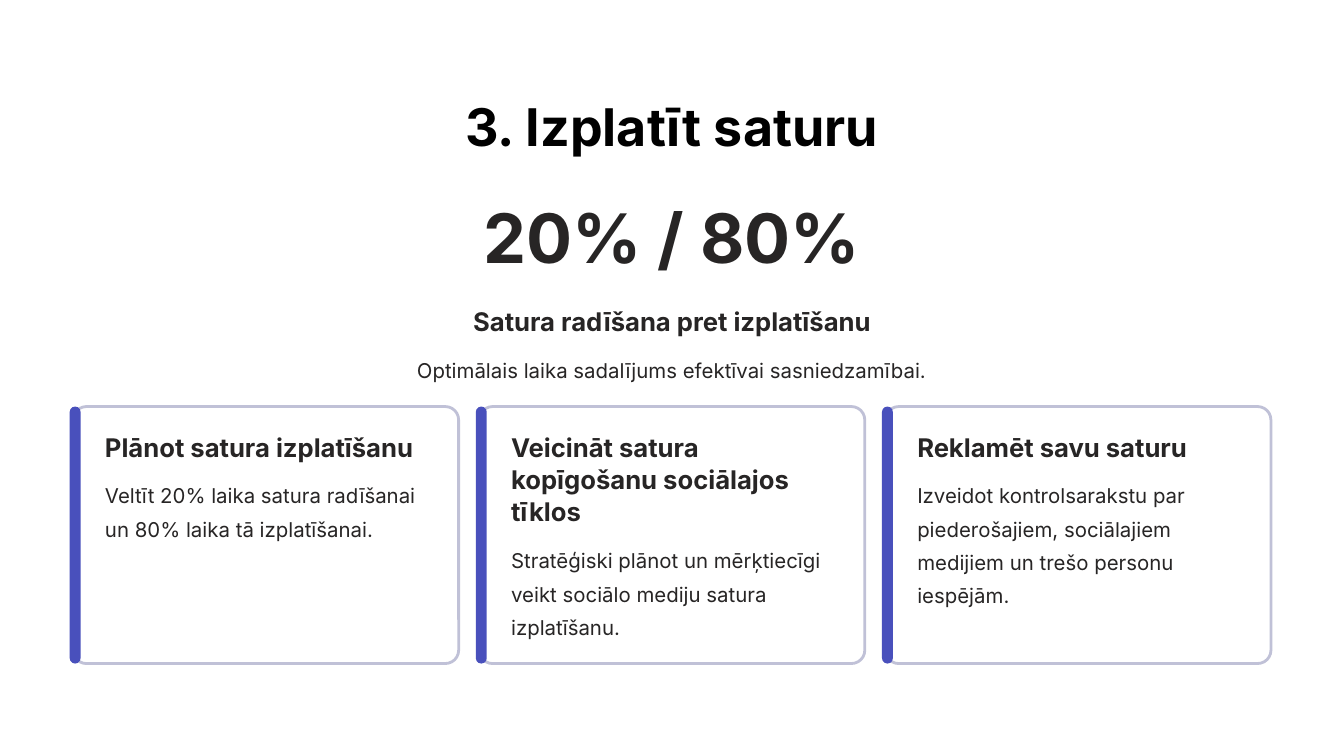
from collections import namedtuple
from dataclasses import dataclass

from pptx import Presentation
from pptx.dml.color import RGBColor
from pptx.enum.shapes import MSO_SHAPE as Preset
from pptx.enum.text import MSO_ANCHOR as Anchor, MSO_AUTO_SIZE as AutoSize, PP_ALIGN as Align
from pptx.util import Inches, Pt

Box = namedtuple("Box", "left top width height")
TextStyle = namedtuple("TextStyle", "size leading color bold")


@dataclass(frozen=True)
class Theme:
    font: str = "Inter"
    paper: str = "FFFFFF"
    border: str = "C0C1D7"
    accent: str = "4950BC"
    border_width: float = 2.4
    title: TextStyle = TextStyle(44.5, 55.5, "000000", True)
    ratio: TextStyle = TextStyle(58.5, 58.5, "272525", True)
    heading: TextStyle = TextStyle(22, 27.5, "272525", True)
    body: TextStyle = TextStyle(17.5, 28.5, "272525", False)


THEME = Theme()
SLIDE_WIDTH, SLIDE_HEIGHT = 16, 9
MARGIN = 0.87
CONTENT_WIDTH = SLIDE_WIDTH - 2 * MARGIN
CARD_GAP = 0.245
HEADING_LINE = 0.387

TITLE = "3. Izplatīt saturu"
RATIO = "20% / 80%"
RATIO_LABEL = "Satura radīšana pret izplatīšanu"
RATIO_NOTE = "Optimālais laika sadalījums efektīvai sasniedzamībai."

# Heading, number of heading lines, body
CARDS = [
    ("Plānot satura izplatīšanu", 1,
     "Veltīt 20% laika satura radīšanai un 80% laika tā izplatīšanai."),
    ("Veicināt satura kopīgošanu sociālajos tīklos", 3,
     "Stratēģiski plānot un mērķtiecīgi veikt sociālo mediju satura izplatīšanu."),
    ("Reklamēt savu saturu", 1,
     "Izveidot kontrolsarakstu par piederošajiem, sociālajiem medijiem "
     "un trešo personu iespējām."),
]


def place(shape, box):
    shape.left, shape.top, shape.width, shape.height = map(Inches, box)


def write(shape, text, style, align=Align.LEFT, wrap=True):
    frame = shape.text_frame
    frame.margin_left = frame.margin_right = frame.margin_top = frame.margin_bottom = 0
    frame.auto_size = AutoSize.NONE
    frame.vertical_anchor = Anchor.TOP
    frame.word_wrap = wrap
    paragraph = frame.paragraphs[0]
    paragraph.alignment = align
    paragraph.line_spacing = Pt(style.leading)
    run = paragraph.add_run()
    run.text = text
    run.font.name = THEME.font
    run.font.size = Pt(style.size)
    run.font.bold = style.bold
    run.font.color.rgb = RGBColor.from_string(style.color)


def add_text(slide, box, text, style, align=Align.LEFT, wrap=True):
    write(slide.shapes.add_textbox(*map(Inches, box)), text, style, align, wrap)


def add_panel(slide, box, rounding, fill, line=None):
    shape = slide.shapes.add_shape(Preset.ROUNDED_RECTANGLE, *map(Inches, box))
    shape.adjustments[0] = rounding
    shape.shadow.inherit = False
    shape.fill.solid()
    shape.fill.fore_color.rgb = RGBColor.from_string(fill)
    if line:
        shape.line.color.rgb = RGBColor.from_string(line)
        shape.line.width = Pt(THEME.border_width)
    else:
        shape.line.fill.background()


def add_title(slide, box):
    title = slide.shapes.title
    place(title, box)
    write(title, TITLE, THEME.title, Align.CENTER, wrap=False)


def add_ratio(slide, box):
    """Large ratio with its label and note, stacked and centred."""
    rows = [(0, 0.82, RATIO, THEME.ratio),
            (1.13, 0.39, RATIO_LABEL, THEME.heading),
            (1.67, 0.4, RATIO_NOTE, THEME.body)]
    for offset, height, text, style in rows:
        row = Box(box.left, box.top + offset, box.width, height)
        add_text(slide, row, text, style, Align.CENTER, wrap=False)


def add_card(slide, box, heading, heading_lines, body):
    # Frame and accent bar
    add_panel(slide, box, 0.052, THEME.paper, THEME.border)
    add_panel(slide, Box(box.left - 0.04, box.top, 0.13, box.height), 0.5, THEME.accent)
    # Heading, with the body below it
    left, top, width = box.left + 0.38, box.top + 0.28, 3.93
    heading_height = heading_lines * HEADING_LINE
    add_text(slide, Box(left, top, width, heading_height), heading, THEME.heading)
    body_top = top + heading_height + 0.145
    body_height = box.top + box.height - 0.28 - body_top
    add_text(slide, Box(left, body_top, width, body_height), body, THEME.body)


def add_cards(slide, box):
    width = (box.width - CARD_GAP * (len(CARDS) - 1)) / len(CARDS)
    for column, card in enumerate(CARDS):
        left = box.left + column * (width + CARD_GAP)
        add_card(slide, Box(left, box.top, width, box.height), *card)


def main():
    presentation = Presentation()
    presentation.slide_width = Inches(SLIDE_WIDTH)
    presentation.slide_height = Inches(SLIDE_HEIGHT)
    slide = presentation.slides.add_slide(presentation.slide_layouts[5])
    slide.background.fill.solid()
    slide.background.fill.fore_color.rgb = RGBColor.from_string(THEME.paper)

    add_title(slide, Box(4.9, 1.1, 6.2, 0.78))
    add_ratio(slide, Box(MARGIN, 2.49, CONTENT_WIDTH, 2.07))
    add_cards(slide, Box(MARGIN, 4.84, CONTENT_WIDTH, 3.06))
    presentation.save("out.pptx")


if __name__ == "__main__":
    main()
